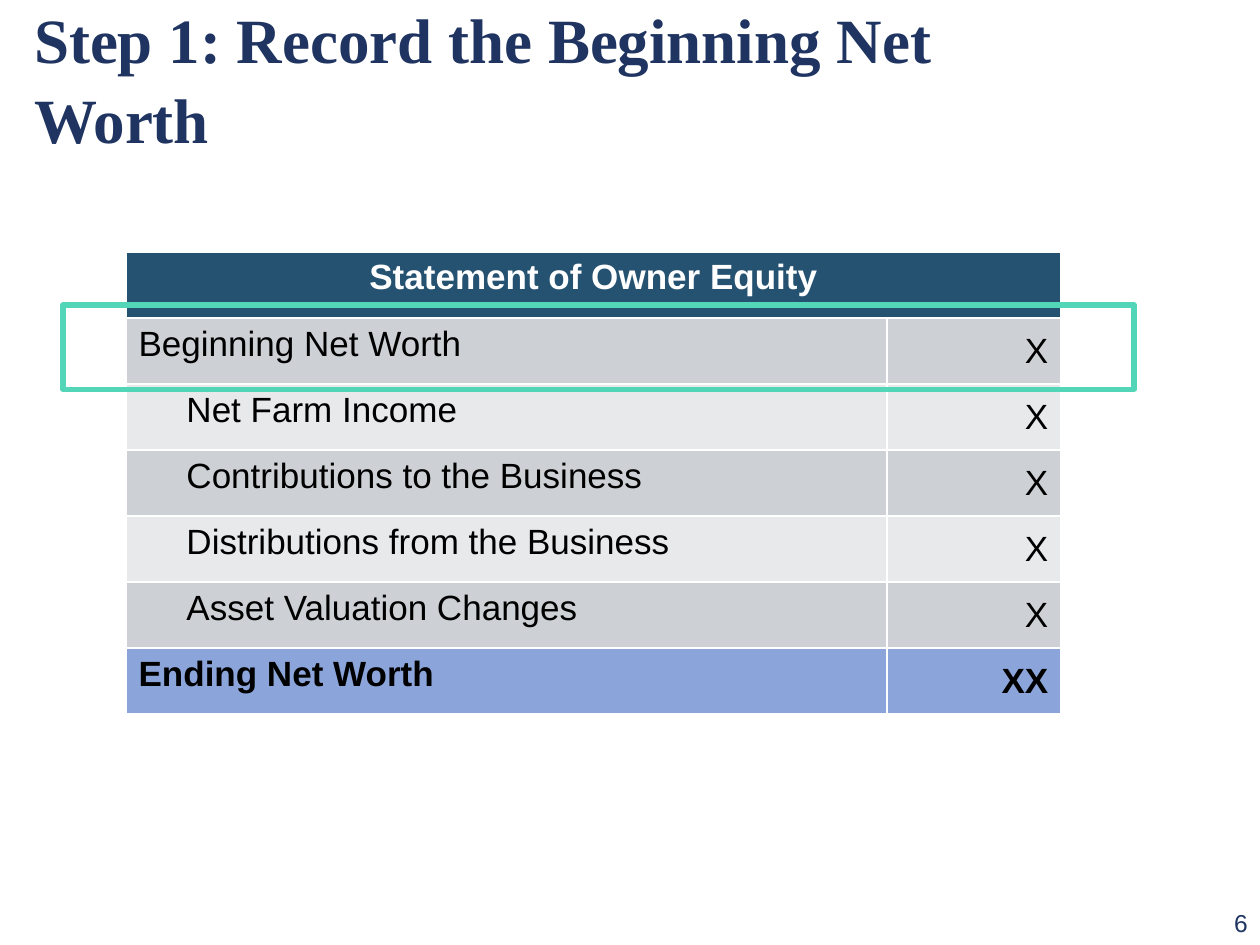
from pptx import Presentation
from pptx.dml.color import RGBColor
from pptx.enum.shapes import MSO_SHAPE
from pptx.enum.text import MSO_ANCHOR, MSO_AUTO_SIZE, PP_ALIGN
from pptx.util import Inches, Pt

LEFT, CENTER, RIGHT = PP_ALIGN.LEFT, PP_ALIGN.CENTER, PP_ALIGN.RIGHT
TOP, MIDDLE = MSO_ANCHOR.TOP, MSO_ANCHOR.MIDDLE
NO_AUTOFIT = MSO_AUTO_SIZE.NONE
RECTANGLE = MSO_SHAPE.RECTANGLE
TITLE_ONLY = 5

COLORS = {
    "navy": "1F3461",
    "header": "265272",
    "dark_band": "CDD1D5",
    "light_band": "E8E9EB",
    "total": "8BA4DA",
    "highlight": "53D5B8",
    "white": "FFFFFF",
    "black": "000000",
}

HEADING = "Statement of Owner Equity"
ENTRIES = [
    ("Beginning Net Worth", "X", False),
    ("Net Farm Income", "X", True),
    ("Contributions to the Business", "X", True),
    ("Distributions from the Business", "X", True),
    ("Asset Valuation Changes", "X", True),
    ("Ending Net Worth", "XX", False),
]


def color(name):
    return RGBColor.from_string(COLORS[name])


def write(frame, text, size, tint, font="Arial", bold=False, align=LEFT):
    frame.text = text
    para = frame.paragraphs[0]
    para.alignment = align
    for span in para.runs:
        span.font.name = font
        span.font.size = Pt(size)
        span.font.bold = bold
        span.font.color.rgb = color(tint)
    return para


def add_title(page, text):
    title = page.shapes.title
    title.left, title.top = Inches(0.17), Inches(0.17)
    title.width, title.height = Inches(8.75), Inches(0.87)
    frame = title.text_frame
    frame.auto_size = NO_AUTOFIT
    frame.vertical_anchor = MIDDLE
    para = write(frame, text, 36, "navy", "Times New Roman", bold=True)
    para.line_spacing = 1.05


def fill_cell(cell, text, fill, tint="black", bold=False, align=LEFT,
              anchor=TOP, indent=0.1):
    cell.fill.solid()
    cell.fill.fore_color.rgb = color(fill)
    cell.vertical_anchor = anchor
    cell.margin_left = Inches(indent)
    write(cell.text_frame, text, 20, tint, bold=bold, align=align)


def add_equity_table(page):
    row_count = len(ENTRIES) + 1
    table = page.shapes.add_table(
        row_count, 2, Inches(1), Inches(2), Inches(7.42), Inches(3.67)
    ).table
    for column, width in zip(table.columns, (6.04, 1.38)):
        column.width = Inches(width)
    for row in table.rows:
        row.height = Inches(3.67 / row_count)

    heading = table.cell(0, 0)
    heading.merge(table.cell(0, 1))
    fill_cell(heading, HEADING, "header", "white", bold=True, align=CENTER)

    for index, (label, amount, indented) in enumerate(ENTRIES, start=1):
        is_total = index == len(ENTRIES)
        band = "dark_band" if index % 2 else "light_band"
        fill = "total" if is_total else band
        fill_cell(table.cell(index, 0), label, fill, bold=is_total,
                  indent=0.48 if indented else 0.1)
        fill_cell(table.cell(index, 1), amount, fill, bold=is_total,
                  align=RIGHT, anchor=MIDDLE)


def add_highlight(page):
    frame = page.shapes.add_shape(
        RECTANGLE, Inches(0.5), Inches(2.42), Inches(8.5), Inches(0.67)
    )
    frame.shadow.inherit = False
    frame.fill.background()
    frame.line.color.rgb = color("highlight")
    frame.line.width = Pt(3)


def add_page_number(page, number):
    box = page.shapes.add_textbox(
        Inches(9.42), Inches(7.16), Inches(0.58), Inches(0.34)
    )
    box.text_frame.word_wrap = True
    write(box.text_frame, number, 14, "navy", align=RIGHT)


def main():
    deck = Presentation()
    deck.slide_width, deck.slide_height = Inches(10), Inches(7.5)
    page = deck.slides.add_slide(deck.slide_layouts[TITLE_ONLY])
    add_page_number(page, "6")
    add_title(page, "Step 1: Record the Beginning Net Worth")
    add_equity_table(page)
    add_highlight(page)
    deck.save("out.pptx")


if __name__ == "__main__":
    main()
